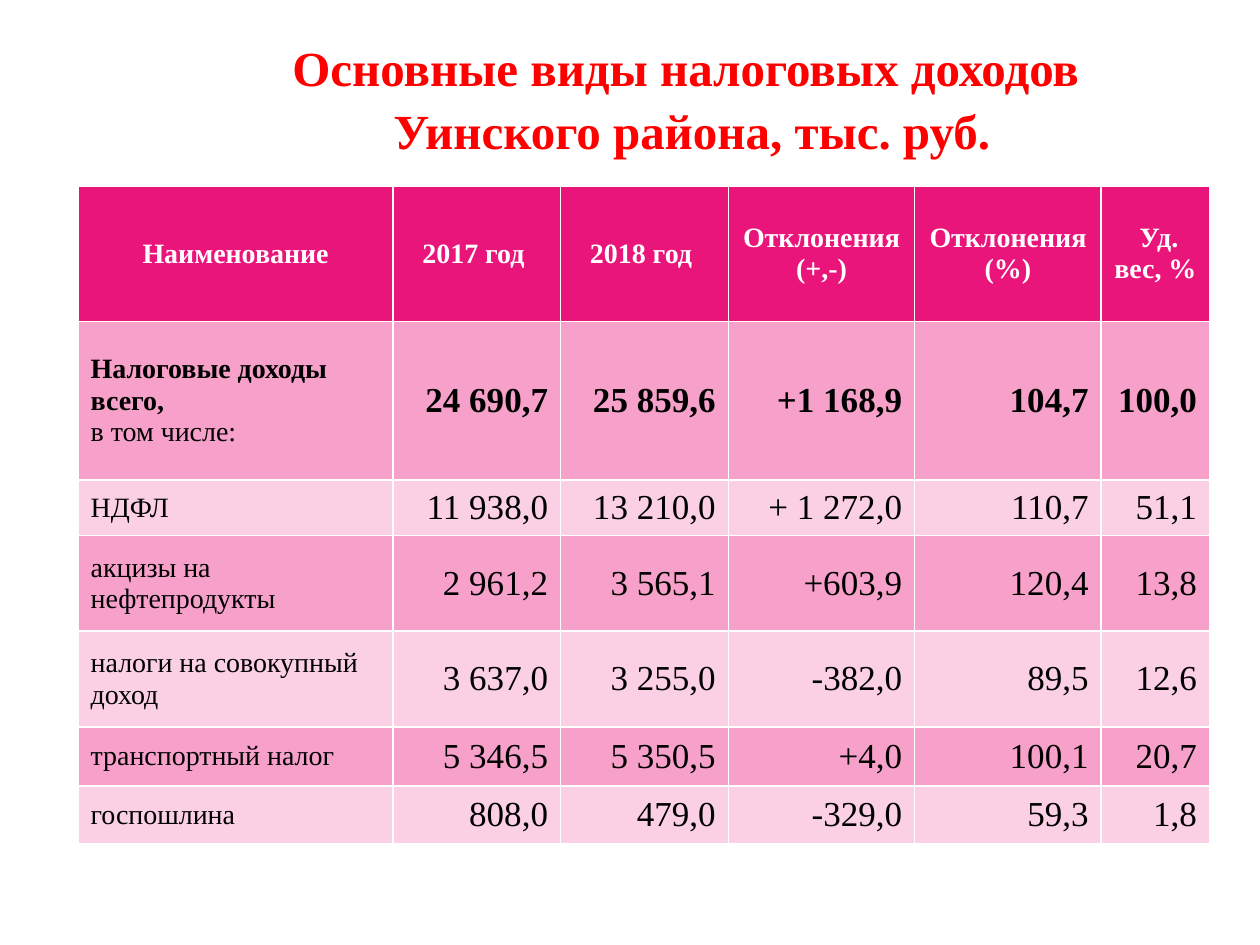
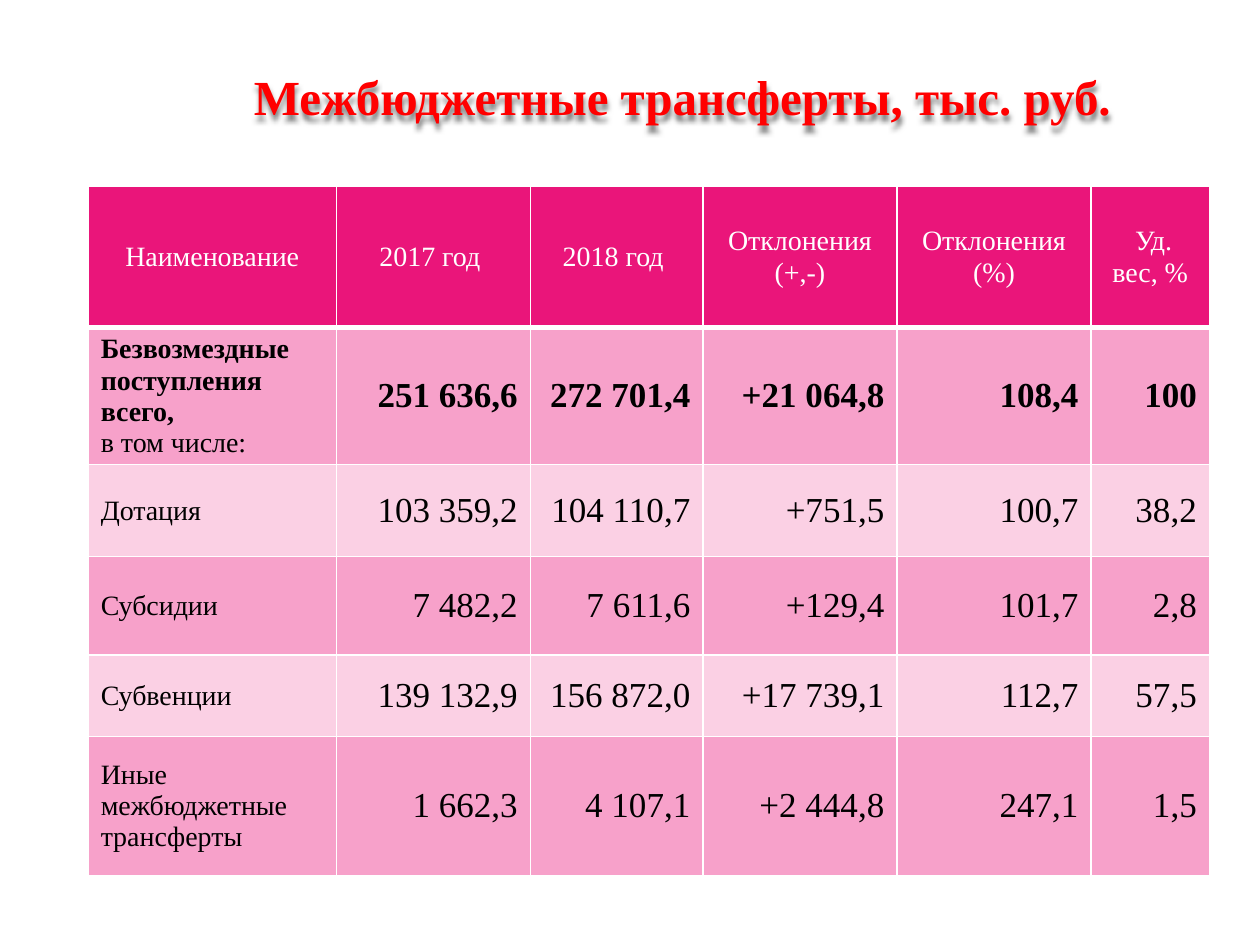
from lxml.etree import SubElement
from pptx import Presentation
from pptx.dml.color import RGBColor
from pptx.enum.text import MSO_ANCHOR, MSO_AUTO_SIZE, PP_ALIGN
from pptx.oxml import parse_xml
from pptx.oxml.ns import nsdecls, qn
from pptx.util import Inches, Pt

FONT = "Times New Roman"
TITLE_SIZE = 28
RED = RGBColor(0xFF, 0x00, 0x00)
WHITE = RGBColor(0xFF, 0xFF, 0xFF)
BLACK = RGBColor(0x00, 0x00, 0x00)
PINK = RGBColor(0xEA, 0x15, 0x7A)
PINK_MID = RGBColor(0xF7, 0xA1, 0xCA)
PINK_LIGHT = RGBColor(0xFB, 0xD0, 0xE4)

HEADINGS = ["Наименование", "2017 год ", "2018 год ", "Отклонения (+,-)",
            "Отклонения (%)", " Уд. вес, %"]

TAX_ROWS = [
    ["Налоговые доходы всего,", "24 690,7", "25 859,6", "+1 168,9", "104,7", "100,0"],
    ["НДФЛ", "11 938,0", "13 210,0", "+ 1 272,0", "110,7", "51,1"],
    ["акцизы на нефтепродукты", "2 961,2", "3 565,1", "+603,9", "120,4", "13,8"],
    ["налоги на совокупный доход", "3 637,0", "3 255,0", "-382,0", "89,5", "12,6"],
    ["транспортный налог", "5 346,5", "5 350,5", "+4,0", "100,1", "20,7"],
    ["госпошлина", "808,0", "479,0", "-329,0", "59,3", "1,8"],
]

TRANSFER_ROWS = [
    ["Безвозмездные поступления всего,", "251 636,6", "272 701,4", "+21 064,8", "108,4", "100"],
    ["Дотация", "103 359,2", "104 110,7", "+751,5", "100,7", "38,2"],
    ["Субсидии", "7 482,2", "7 611,6", "+129,4", "101,7", "2,8"],
    ["Субвенции", "139 132,9", "156 872,0", "+17 739,1", "112,7", "57,5"],
    ["Иные межбюджетные трансферты", "1 662,3", "4 107,1", "+2 444,8", "247,1", "1,5"],
]


def write(p, text, size=16, color=BLACK, bold=False, align=PP_ALIGN.LEFT):
    """Fill a paragraph with formatted text; a vertical tab breaks the line."""
    p.text = text
    p.alignment = align
    for r in p.runs:
        r.font.name = FONT
        r.font.size = Pt(size)
        r.font.bold = bold
        r.font.color.rgb = color


def add_title(s, text, box, shadow=False):
    """Place the title placeholder in the box, optionally with a soft shadow."""
    sp = s.shapes.title
    sp.left, sp.top, sp.width, sp.height = map(Inches, box)
    tf = sp.text_frame
    tf.auto_size = MSO_AUTO_SIZE.NONE
    tf.vertical_anchor = MSO_ANCHOR.MIDDLE
    p = tf.paragraphs[0]
    write(p, text, size=TITLE_SIZE, color=RED, bold=True, align=PP_ALIGN.CENTER)
    p.line_spacing = 1.07
    if shadow:
        sp._element.spPr.append(parse_xml(
            f'<a:effectLst {nsdecls("a")}>'
            '<a:outerShdw blurRad="38100" dist="38100" dir="5400000">'
            '<a:srgbClr val="000000"><a:alpha val="50000"/></a:srgbClr>'
            '</a:outerShdw></a:effectLst>'))


def set_borders(cell, bottom=1):
    """Draw white borders around a cell, with its own bottom width."""
    tcPr = cell._tc.get_or_add_tcPr()
    for side, width in (("L", 1), ("R", 1), ("T", 1), ("B", bottom)):
        ln = SubElement(tcPr, qn(f"a:ln{side}"), w=str(Pt(width)))
        fill = SubElement(ln, qn("a:solidFill"))
        SubElement(fill, qn("a:srgbClr"), val=str(WHITE))


def add_budget_table(s, rows, left, top, widths, heights, bold_header=True, header_line=1):
    """Add a table with a header, a bold total row and banded detail rows."""
    table = s.shapes.add_table(len(heights), len(widths), Inches(left), Inches(top),
                               Inches(sum(widths)), Inches(sum(heights))).table
    for column, width in zip(table.columns, widths):
        column.width = Inches(width)
    for row, height in zip(table.rows, heights):
        row.height = Inches(height)
    for i, texts in enumerate([HEADINGS] + rows):
        for j, text in enumerate(texts):
            cell = table.cell(i, j)
            set_borders(cell, header_line if i == 0 else 1)
            cell.fill.solid()
            cell.vertical_anchor = MSO_ANCHOR.MIDDLE
            p = cell.text_frame.paragraphs[0]
            if i == 0:
                cell.fill.fore_color.rgb = PINK
                write(p, text, color=WHITE, bold=bold_header, align=PP_ALIGN.CENTER)
                continue
            cell.fill.fore_color.rgb = PINK_MID if i % 2 else PINK_LIGHT
            if j == 0:
                write(p, text, bold=i == 1)
            else:
                write(p, text, size=20, bold=i == 1, align=PP_ALIGN.RIGHT)
    write(table.cell(1, 0).text_frame.add_paragraph(), "в том числе:")


def main():
    """Build both budget slides and save the presentation."""
    prs = Presentation()
    prs.slide_width, prs.slide_height = Inches(10), Inches(7.5)
    title_style = next(prs.slide_master.element.iter(qn("p:titleStyle")))
    next(title_style.iter(qn("a:defRPr"))).set("sz", str(TITLE_SIZE * 100))
    title_only = prs.slide_layouts[5]

    s = prs.slides.add_slide(title_only)
    add_title(s, "Основные виды налоговых доходов \vУинского района, тыс. руб.",
              (1.48, 0.3, 8.02, 0.93))
    add_budget_table(s, TAX_ROWS, 0.62, 1.48,
                     widths=[2.5, 1.33, 1.33, 1.48, 1.48, 0.86],
                     heights=[1.07, 1.26, 0.44, 0.76, 0.76, 0.47, 0.46])

    s = prs.slides.add_slide(title_only)
    add_title(s, "Межбюджетные трансферты, тыс. руб.", (1.33, 0.31, 8.17, 0.87), shadow=True)
    add_budget_table(s, TRANSFER_ROWS, 0.7, 1.48,
                     widths=[1.97, 1.54, 1.37, 1.54, 1.54, 0.94],
                     heights=[1.12, 0.94, 0.73, 0.78, 0.65, 1.1],
                     bold_header=False, header_line=3)

    prs.save("out.pptx")


if __name__ == "__main__":
    main()
